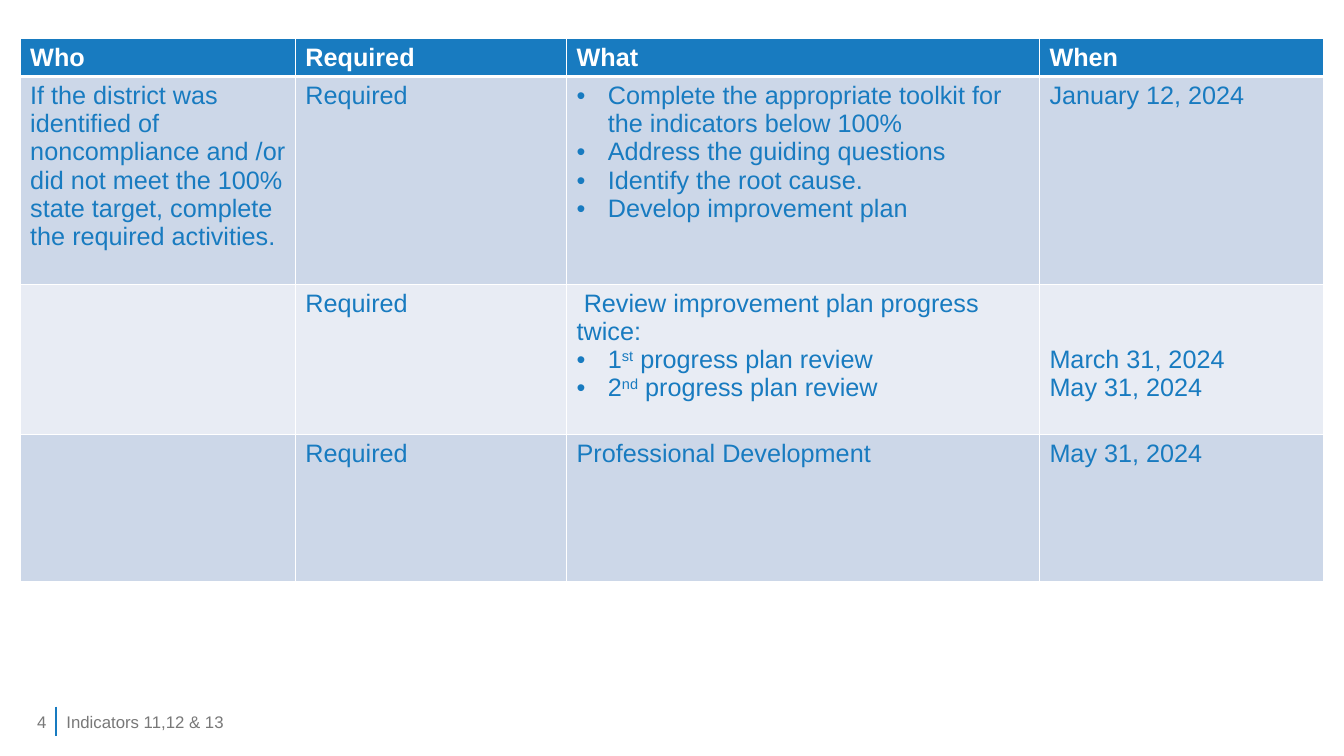
"""Build the slide with the table of required district activities."""
from dataclasses import dataclass

from lxml import etree
from pptx import Presentation
from pptx.dml.color import RGBColor
from pptx.enum.shapes import MSO_CONNECTOR
from pptx.enum.text import MSO_ANCHOR, PP_ALIGN
from pptx.oxml.ns import qn
from pptx.util import Emu, Pt

STRAIGHT = MSO_CONNECTOR.STRAIGHT
MIDDLE = MSO_ANCHOR.MIDDLE
LEFT, RIGHT = PP_ALIGN.LEFT, PP_ALIGN.RIGHT

BLUE, WHITE, GREY = "187BC0", "FFFFFF", "787878"
BANDS = ("CCD7E8", "E8ECF4")
FACE = "Arial"
COLS = (273, 269, 469, 282)
ROWS = (37, 206, 149, 146)


@dataclass(frozen=True)
class Para:
    """Hold one paragraph; parts between carets are raised."""
    text: str
    bullet: bool = False
    indent: int = 0


@dataclass(frozen=True)
class Entry:
    """Hold the paragraphs and top margin of one table cell."""
    paras: tuple[Para, ...] = ()
    top: int = 5


@dataclass(frozen=True)
class Label:
    """Hold one footer text."""
    text: str
    left: int
    width: int
    align: PP_ALIGN


def plain(*texts: str, top: int = 5) -> Entry:
    """Make a cell entry of plain paragraphs."""
    return Entry(tuple(Para(text) for text in texts), top)


NEED = plain("Required")
GRID = (
    (plain("Who"), NEED, plain("What"), plain("When")),
    (
        plain("If the district was identified of noncompliance and /or "
              "did not meet the 100% state target, complete the required "
              "activities."),
        NEED,
        Entry((
            Para("Complete the appropriate toolkit for the indicators "
                 "below 100%", True),
            Para("Address the guiding questions", True),
            Para("Identify the root cause.", True),
            Para("Develop improvement plan", True),
        )),
        plain("January 12, 2024"),
    ),
    (
        Entry(),
        NEED,
        Entry((
            Para("Review improvement plan progress twice:", indent=7),
            Para("1^st^ progress plan review", True),
            Para("2^nd^ progress plan review", True),
        )),
        plain("March 31, 2024", "May 31, 2024", top=61),
    ),
    (Entry(), NEED, plain("Professional Development"), plain("May 31, 2024")),
)
LABELS = (
    Label("4", 0, 56, RIGHT),
    Label("Indicators 11,12 & 13", 56, 652, LEFT),
)


def px(size: int) -> Emu:
    """Turn px, at 100 to the inch, into EMU."""
    return Emu(size * 9144)


def color(code: str) -> RGBColor:
    """Turn a hex string into a colour."""
    return RGBColor.from_string(code)


def add_run(para, text: str, size: int, shade: str, bold: bool = False,
            raised: bool = False) -> None:
    """Add one formatted run."""
    run = para.add_run()
    run.text = text
    font = run.font
    font.name, font.size, font.bold = FACE, Pt(size), bold
    font.color.rgb = color(shade)
    if raised:
        run._r.get_or_add_rPr().set("baseline", "30000")


def set_indent(para, item: Para) -> None:
    """Set the indent and bullet of a paragraph."""
    props = para._p.get_or_add_pPr()
    if item.bullet:
        props.set("marL", str(px(31)))
        props.set("indent", str(-px(31)))
        font = etree.SubElement(props, qn("a:buFont"))
        font.set("typeface", FACE)
        etree.SubElement(props, qn("a:buChar")).set("char", "•")
    elif item.indent:
        props.set("indent", str(px(item.indent)))


def set_edge(cell, side: str, width: int) -> None:
    """Draw one white cell border."""
    props = cell._tc.get_or_add_tcPr()
    line = etree.SubElement(props, qn(f"a:ln{side}"), w=str(Pt(width)))
    fill = etree.SubElement(line, qn("a:solidFill"))
    etree.SubElement(fill, qn("a:srgbClr"), val=WHITE)


def fill_cell(cell, entry: Entry, row: int) -> None:
    """Format one cell and write its text."""
    head = row == 0
    for side in "LRTB":
        thick = (row, side) in ((0, "B"), (1, "T"))
        set_edge(cell, side, 3 if thick else 1)
    cell.fill.solid()
    cell.fill.fore_color.rgb = color(BLUE if head else BANDS[(row - 1) % 2])
    cell.margin_top = px(entry.top)
    frame = cell.text_frame
    for spot, item in enumerate(entry.paras):
        para = frame.add_paragraph() if spot else frame.paragraphs[0]
        set_indent(para, item)
        for part, text in enumerate(item.text.split("^")):
            add_run(para, text, 18, WHITE if head else BLUE, head,
                    part % 2 == 1)


def add_grid(slide) -> None:
    """Add the activity table."""
    table = slide.shapes.add_table(
        len(ROWS), len(COLS), px(20), px(38), px(sum(COLS)), px(sum(ROWS))
    ).table
    for col, width in zip(table.columns, COLS):
        col.width = px(width)
    for row, height in zip(table.rows, ROWS):
        row.height = px(height)
    for row, entries in enumerate(GRID):
        for col, entry in enumerate(entries):
            fill_cell(table.cell(row, col), entry, row)


def add_label(slide, label: Label) -> None:
    """Add one footer text."""
    box = slide.shapes.add_textbox(px(label.left), px(696),
                                   px(label.width), px(40))
    frame = box.text_frame
    frame.word_wrap = True
    frame.vertical_anchor = MIDDLE
    para = frame.paragraphs[0]
    para.alignment = label.align
    add_run(para, label.text, 12, GREY)


def add_rule(slide) -> None:
    """Add the footer divider."""
    rule = slide.shapes.add_connector(STRAIGHT, px(56), px(701),
                                      px(56), px(730))
    rule.line.color.rgb = color(BLUE)
    rule.line.width = Pt(1.5)
    etree.SubElement(rule._element.spPr, qn("a:effectLst"))


def main() -> None:
    """Build and save the deck."""
    deck = Presentation()
    deck.slide_width, deck.slide_height = px(1333), px(750)
    slide = deck.slides.add_slide(deck.slide_layouts[6])
    add_rule(slide)
    add_grid(slide)
    for label in LABELS:
        add_label(slide, label)
    deck.save("out.pptx")


if __name__ == "__main__":
    main()
